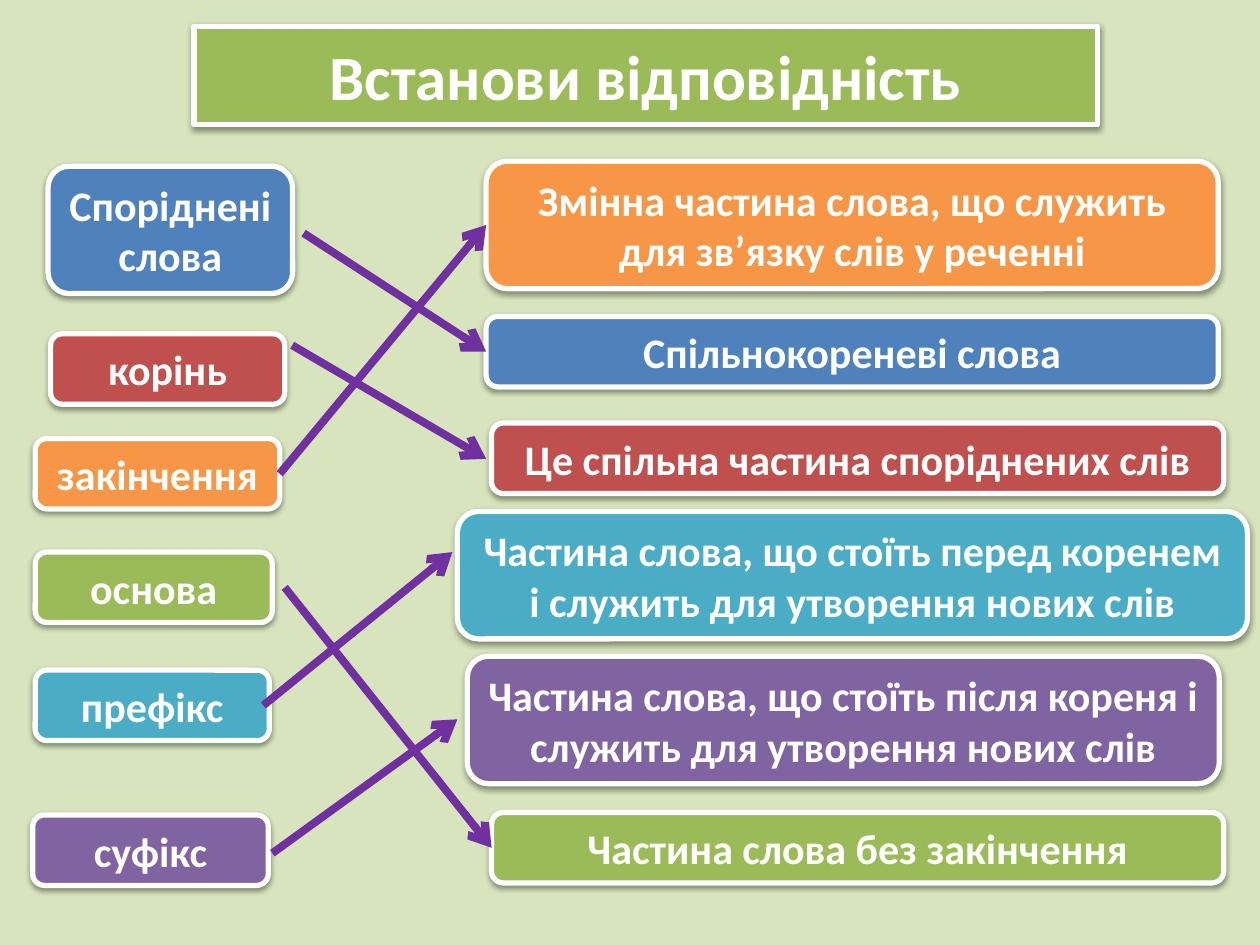
from dataclasses import dataclass

from lxml import etree
from pptx import Presentation
from pptx.dml.color import RGBColor
from pptx.enum.shapes import MSO_CONNECTOR, MSO_SHAPE
from pptx.enum.text import MSO_ANCHOR, PP_ALIGN
from pptx.oxml.ns import qn
from pptx.util import Cm, Pt

RECT, ROUND = MSO_SHAPE.RECTANGLE, MSO_SHAPE.ROUNDED_RECTANGLE
STRAIGHT = MSO_CONNECTOR.STRAIGHT
CENTER, MIDDLE = PP_ALIGN.CENTER, MSO_ANCHOR.MIDDLE
LEFT, RIGHT = 1, 3


@dataclass(frozen=True)
class Theme:
    back: str = "D7E4BD"
    white: str = "FFFFFF"
    arrow: str = "7030A0"
    blue: str = "4F81BD"
    red: str = "C0504D"
    orange: str = "F79646"
    green: str = "9BBB59"
    teal: str = "4BACC6"
    purple: str = "8064A2"
    font: str = "Calibri"
    head: int = 36
    body: int = 24
    edge: float = 3
    stroke: float = 4.5


theme = Theme()
color = RGBColor.from_string

deck = Presentation()
deck.slide_width, deck.slide_height = Cm(25.4), Cm(19.05)
slide = deck.slides.add_slide(deck.slide_layouts[6])
slide.background.fill.solid()
slide.background.fill.fore_color.rgb = color(theme.back)


def add_card(text, place, fill, size=theme.body, shape=ROUND):
    """Add a white-edged box with a soft shadow; place is in centimetres."""
    card = slide.shapes.add_shape(shape, *map(Cm, place))
    card.fill.solid()
    card.fill.fore_color.rgb = color(fill)
    card.line.color.rgb = color(theme.white)
    card.line.width = Pt(theme.edge)
    card.shadow.inherit = False
    effects = card._element.spPr.find(qn("a:effectLst"))
    shadow = etree.SubElement(effects, qn("a:outerShdw"), blurRad="40000",
                              dist="20000", dir="5400000", rotWithShape="0")
    black = etree.SubElement(shadow, qn("a:srgbClr"), val="000000")
    etree.SubElement(black, qn("a:alpha"), val="38000")
    frame = card.text_frame
    frame.word_wrap = True
    frame.vertical_anchor = MIDDLE
    frame.text = text
    for para in frame.paragraphs:
        para.alignment = CENTER
        para.font.name = theme.font
        para.font.size = Pt(size)
        para.font.bold = True
        para.font.color.rgb = color(theme.white)
    return card


add_card("Встанови відповідність", (3.91, 0.53, 18.21, 1.98), theme.green,
         size=theme.head, shape=RECT)

# Colour, term and its place, meaning and its place, arrow start and end.
# An arrow end of None is joined to the middle of the box's side.
low, tall = 1.42, 2.57
pairs = [
    (theme.blue, "Споріднені\nслова", (0.97, 3.35, 4.93, tall),
     "Спільнокореневі слова", (9.8, 6.38, 14.76, low),
     (6.12, 4.7), None),
    (theme.red, "корінь", (1.02, 6.73, 4.72, low),
     "Це спільна частина споріднених слів", (9.91, 8.53, 14.76, low),
     (5.89, 6.96), (9.8, 9.25)),
    (theme.orange, "закінчення", (0.71, 8.84, 4.93, low),
     "Змінна частина слова, що служить для зв’язку слів у реченні",
     (9.8, 3.25, 14.76, tall),
     None, None),
    (theme.green, "основа", (0.71, 11.13, 4.78, low),
     "Частина слова без закінчення", (9.91, 16.38, 14.76, low),
     (5.74, 11.84), None),
    (theme.teal, "префікс", (0.71, 13.51, 4.72, low),
     "Частина слова, що стоїть перед коренем і служить для утворення нових слів",
     (9.22, 10.31, 15.93, tall),
     (5.31, 14.22), (9.12, 11.13)),
    (theme.purple, "суфікс", (0.66, 16.43, 4.75, low),
     "Частина слова, що стоїть після кореня і служить для утворення нових слів",
     (9.42, 13.23, 15.16, tall),
     (5.49, 17.2), (9.22, 14.5)),
]

for fill, term, spot, meaning, place, start, end in pairs:
    source = add_card(term, spot, fill)
    target = add_card(meaning, place, fill)
    first = start or (spot[0] + spot[2], spot[1] + spot[3] / 2)
    last = end or (place[0], place[1] + place[3] / 2)
    arrow = slide.shapes.add_connector(STRAIGHT, *map(Cm, first + last))
    if start is None:
        arrow.begin_connect(source, RIGHT)
    if end is None:
        arrow.end_connect(target, LEFT)
    arrow.line.color.rgb = color(theme.arrow)
    arrow.line.width = Pt(theme.stroke)
    etree.SubElement(arrow.line._get_or_add_ln(), qn("a:tailEnd"), type="arrow")
    etree.SubElement(arrow._element.spPr, qn("a:effectLst"))

deck.save("out.pptx")
